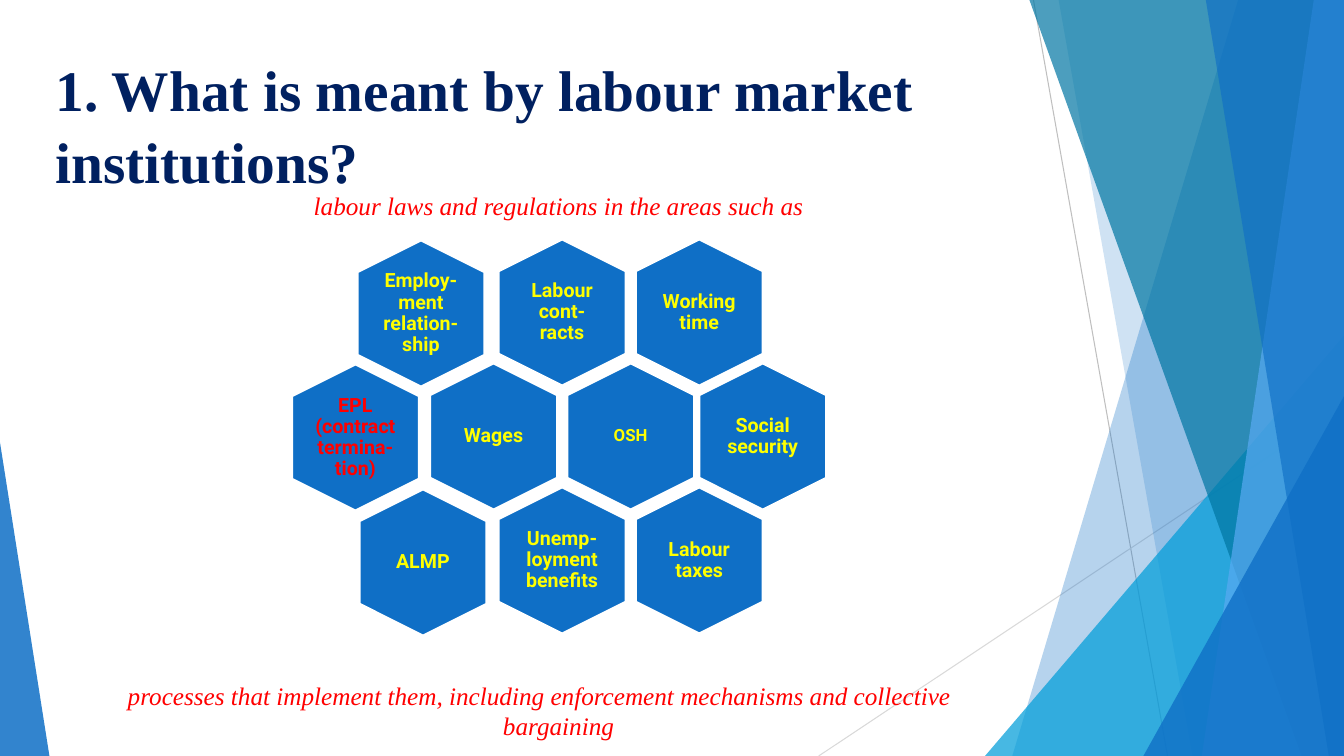
from dataclasses import dataclass

from lxml.etree import SubElement
from pptx import Presentation
from pptx.dml.color import RGBColor
from pptx.enum.shapes import MSO_CONNECTOR as Connector, MSO_SHAPE as Preset
from pptx.enum.text import MSO_ANCHOR as Anchor, PP_ALIGN as Align
from pptx.oxml.ns import qn
from pptx.util import Inches, Pt

BLUE, NAVY, YELLOW, RED = "0F6FC6", "002060", "FFFF00", "FF0000"
SERIF, SANS = "Times New Roman", "Roboto"
WIDTH, HEIGHT = 13.33, 7.5
HEXAGON_WIDTH, HEXAGON_HEIGHT = 1.45, 1.26
LABEL_LEFT, LABEL_TOP, LABEL_WIDTH, LABEL_HEIGHT = 0.29, 0.13, 0.87, 1


@dataclass
class Ray:
    start: tuple[float, float]
    end: tuple[float, float]
    color: str


@dataclass
class Band:
    top_left: float
    bottom_left: float
    color: str
    opacity: int


@dataclass
class Wedge:
    left: float
    top: float
    width: float
    peak: float
    color: str
    opacity: int


@dataclass
class Cell:
    left: float
    top: float
    text: str
    inset: float = 0
    size: float = 14
    color: str = YELLOW


RAYS = [
    Ray((10.25, 0), (11.58, HEIGHT), "BFBFBF"),
    Ray((WIDTH, 4.03), (8.12, HEIGHT), "D9D9D9"),
]
BACKDROP = [
    Band(12.28, 10.04, BLUE, 30),
    Band(10.5, 11.83, BLUE, 20),
    Wedge(9.77, 3.33, 3.56, 1, "009DD9", 72),
    Band(10.21, 12.91, "0076A3", 70),
    Band(13.03, 11.92, "59AAF2", 70),
    Band(11.96, 13.18, BLUE, 65),
    Wedge(11.34, 3.93, 1.99, 1, BLUE, 80),
    Wedge(0, 4.39, 0.49, 0, BLUE, 85),
]
HONEYCOMB = [
    Cell(6.84, 3.7, "Social security", 0.06),
    Cell(3.45, 2.48, "Employ-ment relation-ship"),
    Cell(4.85, 2.47, "Labour cont-racts", 0.06),
    Cell(6.21, 2.47, "Working time"),
    Cell(5.53, 3.7, "OSH", 0.05, 12),
    Cell(4.17, 3.7, "Wages"),
    Cell(4.85, 4.93, "Unemp-loyment benefits", 0.06),
    Cell(6.21, 4.93, "Labour taxes"),
    Cell(3.47, 4.95, "ALMP", 0.06),
    Cell(2.8, 3.71, "EPL (contract termina-tion)", color=RED),
]


def rgb(color: str) -> RGBColor:
    return RGBColor.from_string(color)


def apply(target, values: dict) -> None:
    for name, value in values.items():
        setattr(target, name, value)


def place(shape, left: float, top: float, width: float, height: float) -> None:
    apply(shape, {"left": Inches(left), "top": Inches(top),
                  "width": Inches(width), "height": Inches(height)})


def write(para, text: str, color: str, **font_values) -> None:
    span = para.add_run()
    span.text = text
    apply(span.font, font_values)
    span.font.color.rgb = rgb(color)


def set_frame(frame, insets: tuple[float, float, float, float], anchor) -> None:
    sides = ("margin_left", "margin_top", "margin_right", "margin_bottom")
    apply(frame, {side: Inches(inset) for side, inset in zip(sides, insets)})
    apply(frame, {"word_wrap": True, "vertical_anchor": anchor})


def paint(shape, color: str, opacity: int) -> None:
    shape.shadow.inherit = False
    shape.line.fill.background()
    shape.fill.solid()
    shape.fill.fore_color.rgb = rgb(color)
    tint = shape.element.spPr.find(qn("a:solidFill")).find(qn("a:srgbClr"))
    SubElement(tint, qn("a:alpha")).set("val", str(opacity * 1000))


def draw_ray(page, ray: Ray) -> None:
    points = [Inches(value) for value in (*ray.start, *ray.end)]
    line = page.shapes.add_connector(Connector.STRAIGHT, *points)
    line.line.color.rgb = rgb(ray.color)
    line.line.width = Pt(0.75)
    SubElement(line.element.spPr, qn("a:effectLst"))


def draw_band(page, band: Band) -> None:
    outline = page.shapes.build_freeform(Inches(band.top_left), 0)
    corners = [(WIDTH, 0), (WIDTH, HEIGHT), (band.bottom_left, HEIGHT)]
    outline.add_line_segments([(Inches(x), Inches(y)) for x, y in corners])
    paint(outline.convert_to_shape(), band.color, band.opacity)


def draw_wedge(page, wedge: Wedge) -> None:
    box = (wedge.left, wedge.top, wedge.width, HEIGHT - wedge.top)
    shape = page.shapes.add_shape(Preset.ISOSCELES_TRIANGLE, *map(Inches, box))
    shape.adjustments[0] = wedge.peak
    paint(shape, wedge.color, wedge.opacity)


def draw_cell(page, cell: Cell) -> None:
    box = (cell.left, cell.top, HEXAGON_WIDTH, HEXAGON_HEIGHT)
    hexagon = page.shapes.add_shape(Preset.HEXAGON, *map(Inches, box))
    hexagon.rotation = 90
    hexagon.adjustments[0] = 0.25
    paint(hexagon, BLUE, 100)
    hexagon.line.color.rgb = rgb("FFFFFF")
    hexagon.line.width = Pt(1.5)

    box = (cell.left + LABEL_LEFT, cell.top + LABEL_TOP, LABEL_WIDTH, LABEL_HEIGHT)
    frame = page.shapes.add_textbox(*map(Inches, box)).text_frame
    set_frame(frame, (cell.inset,) * 4, Anchor.MIDDLE)
    para = frame.paragraphs[0]
    apply(para, {"alignment": Align.CENTER, "line_spacing": 0.9})
    write(para, cell.text, cell.color, name=SANS, size=Pt(cell.size), bold=True)


def draw_title(page) -> None:
    title = page.shapes.title
    place(title, 0.45, 0.43, 9.4, 1.44)
    set_frame(title.text_frame, (0.1, 0.08, 0.1, 0), Anchor.TOP)
    para = title.text_frame.paragraphs[0]
    apply(para, {"alignment": Align.LEFT, "line_spacing": 1.04})
    write(para, "1. What is meant by labour market institutions?", NAVY,
          name=SERIF, size=Pt(41), bold=True)


def draw_statements(page) -> None:
    box = (0.85, 1.39, 9, 6.11)
    frame = page.shapes.add_textbox(*map(Inches, box)).text_frame
    set_frame(frame, (0.1, 0.5, 0.1, 0), Anchor.TOP)
    statements = [
        ("labour laws and regulations in the areas such as", 0, 0),
        ("processes that implement them, including enforcement mechanisms "
         "and collective bargaining", 328, -0.38),
    ]
    for index, (text, gap, indent) in enumerate(statements):
        para = frame.add_paragraph() if index else frame.paragraphs[0]
        apply(para, {"alignment": Align.CENTER, "space_before": Pt(gap)})
        layout = para._p.get_or_add_pPr()
        layout.set("marL", str(Inches(0.38)))
        layout.set("indent", str(Inches(indent)))
        write(para, text, RED, name=SERIF, size=Pt(18), italic=True)


def main() -> None:
    deck = Presentation()
    apply(deck, {"slide_width": Inches(WIDTH), "slide_height": Inches(HEIGHT)})
    page = deck.slides.add_slide(deck.slide_layouts[5])
    for ray in RAYS:
        draw_ray(page, ray)
    for piece in BACKDROP:
        draw = draw_band if isinstance(piece, Band) else draw_wedge
        draw(page, piece)
    draw_title(page)
    draw_statements(page)
    for cell in HONEYCOMB:
        draw_cell(page, cell)
    deck.save("out.pptx")


if __name__ == "__main__":
    main()
